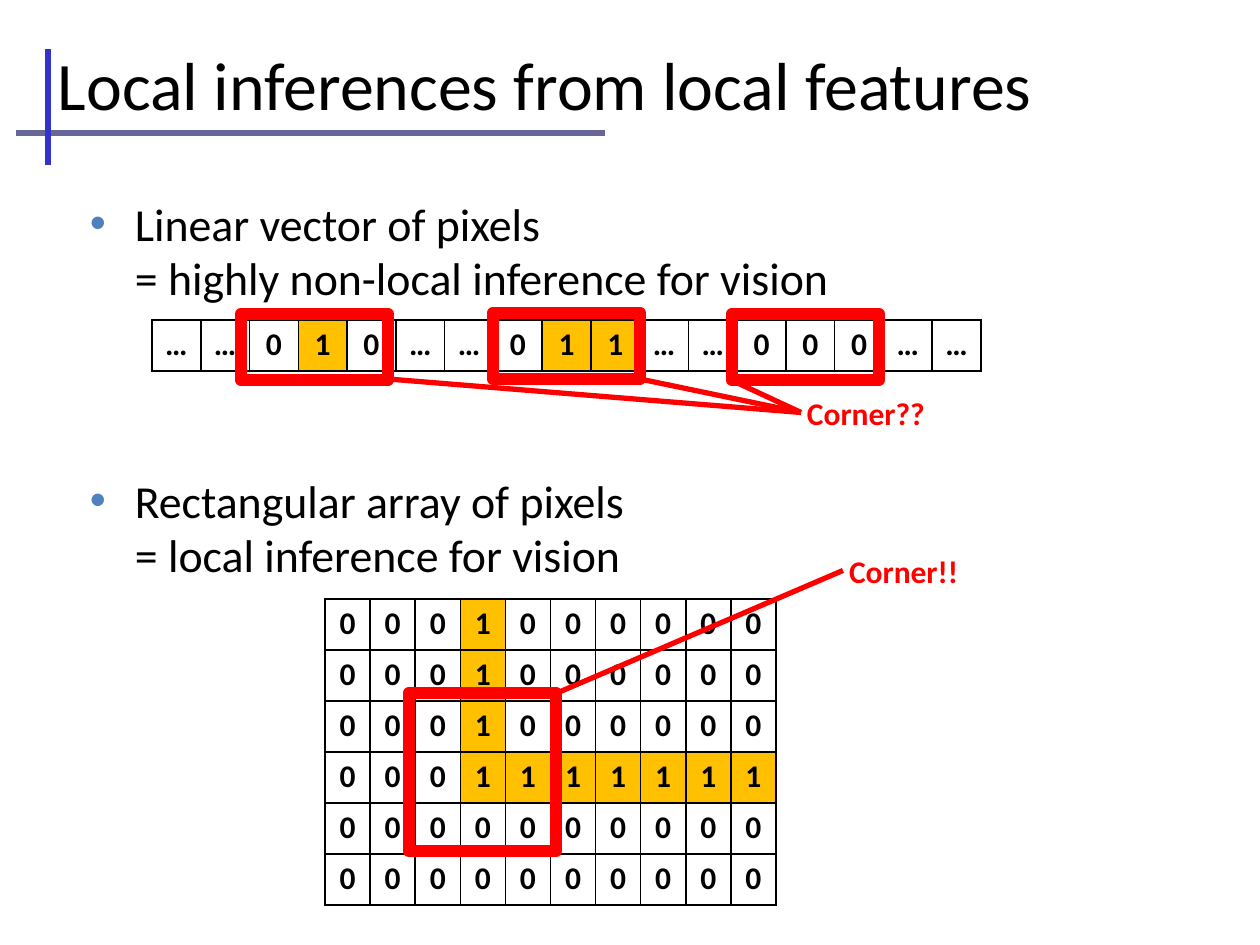
from lxml import etree
from pptx import Presentation
from pptx import util as u
from pptx.dml.color import RGBColor
from pptx.enum import shapes, text
from pptx.oxml import ns

SCALE = 914400 / 126
FONT = "Calibri"
BLACK, RED, AMBER = "000000", "FF0000", "FFC000"
VECTOR = "……010……011……000……"
ARRAY = ["0001000000"] * 3 + ["0001111111"] + ["0000000000"] * 2


def px(length):
    return u.Emu(round(length * SCALE))


def color(value):
    return RGBColor.from_string(value)


def add_node(parent, tag, **attributes):
    return etree.SubElement(parent, ns.qn(tag), attributes)


def format_paragraph(paragraph, size, value=BLACK, bold=False):
    for run in paragraph.runs:
        run.font.name = FONT
        run.font.size = u.Pt(size)
        run.font.bold = bold
        run.font.color.rgb = color(value)


def set_margins(target):
    target.margin_left = target.margin_right = px(6)
    target.margin_top = target.margin_bottom = px(6)


def add_text(slide, box, lines, size, value=BLACK, bold=False):
    shape = slide.shapes.add_textbox(*map(px, box))
    frame = shape.text_frame
    frame.word_wrap = True
    set_margins(frame)
    frame.text = "\n".join(lines)
    for paragraph in frame.paragraphs:
        format_paragraph(paragraph, size, value, bold)
    return shape


def add_line(slide, start, end, value):
    line = slide.shapes.add_connector(
        shapes.MSO_CONNECTOR.STRAIGHT, *map(px, (*start, *end)))
    line.line.color.rgb = color(value)
    line.line.width = u.Pt(3)
    add_node(line.element.spPr, "a:effectLst")
    return line


def add_window(slide, box):
    window = slide.shapes.add_shape(shapes.MSO_SHAPE.RECTANGLE, *map(px, box))
    window.shadow.inherit = False
    window.fill.background()
    window.line.color.rgb = color(RED)
    window.line.width = u.Pt(7)
    add_node(window.line._get_or_add_ln(), "a:round")


def add_callout(slide, box, label, targets):
    shape = add_text(slide, box, [label], 18, RED, True)
    left, top, width, height = box
    for target in targets:
        line = add_line(slide, (left, top + height / 2), target, RED)
        line.begin_connect(shape, 1)


def add_title(slide, box):
    left, top, width, height = box
    add_line(slide, (left - 36, top + 120), (left + 553, top + 120), "666699")
    add_line(slide, (left - 4, top + 152), (left - 4, top + 36), "3333CC")
    title = add_text(slide, box, ["Local inferences from local features"], 38.8)
    title.text_frame.vertical_anchor = text.MSO_ANCHOR.MIDDLE


def add_body(slide, box):
    lines = ["Linear vector of pixels", "= highly non-local inference for vision",
             "Rectangular array of pixels", "= local inference for vision"]
    body = add_text(slide, box, lines, 26.2)
    for index, paragraph in enumerate(body.text_frame.paragraphs):
        paragraph.line_spacing = 0.8
        paragraph.space_before = u.Pt((0, 6, 102, 6)[index])
        properties = paragraph._p.get_or_add_pPr()
        properties.set("marL", str(px(45)))
        properties.set("indent", "0")
        if index % 2 == 0:
            properties.set("indent", str(-px(45)))
            bullet_color = add_node(properties, "a:buClr")
            add_node(bullet_color, "a:srgbClr", val="4F81BD")
            add_node(properties, "a:buFont", typeface="Arial")
            add_node(properties, "a:buChar", char="•")


def add_borders(cell):
    properties = cell._tc.get_or_add_tcPr()
    for side in ("a:lnL", "a:lnR", "a:lnT", "a:lnB"):
        border = add_node(properties, side, w=str(u.Pt(1)))
        fill = add_node(border, "a:solidFill")
        add_node(fill, "a:srgbClr", val=BLACK)


def add_pixels(slide, box, rows):
    frame = slide.shapes.add_table(len(rows), len(rows[0]), *map(px, box))
    table = frame.table
    table.first_row = table.horz_banding = False
    for row_index, row in enumerate(rows):
        for column_index, value in enumerate(row):
            cell = table.cell(row_index, column_index)
            add_borders(cell)
            set_margins(cell)
            if value == "1":
                cell.fill.solid()
                cell.fill.fore_color.rgb = color(AMBER)
            else:
                cell.fill.background()
            cell.text = value
            paragraph = cell.text_frame.paragraphs[0]
            paragraph.alignment = text.PP_ALIGN.CENTER
            format_paragraph(paragraph, 18, bold=True)


def add_array(slide, box):
    left, top, width, height = box
    add_pixels(slide, box, ARRAY)
    add_window(slide, (left + 84, top + 94, 147, 158))
    add_callout(slide, (left + 518, top - 53, 155, 49), "Corner!!",
                [(left + 232, top + 94)])


def add_vector(slide, box):
    left, top, width, height = box
    add_pixels(slide, box, [VECTOR])
    add_callout(slide, (left + 649, top + 68, 175, 49), "Corner??",
                [(left + x, top + 59) for x in (488, 577, 236)])
    for x, y in ((89, -6), (341, -7), (580, -6)):
        add_window(slide, (left + x, top + y, 147, 66))


def main():
    presentation = Presentation()
    presentation.slide_width = px(1260)
    presentation.slide_height = px(945)
    slide = presentation.slides.add_slide(presentation.slide_layouts[6])
    add_title(slide, (52, 13, 1124, 141))
    add_body(slide, (84, 200, 1081, 399))
    add_array(slide, (325, 599, 451, 306))
    add_vector(slide, (152, 320, 829, 51))
    presentation.save("out.pptx")


if __name__ == "__main__":
    main()
